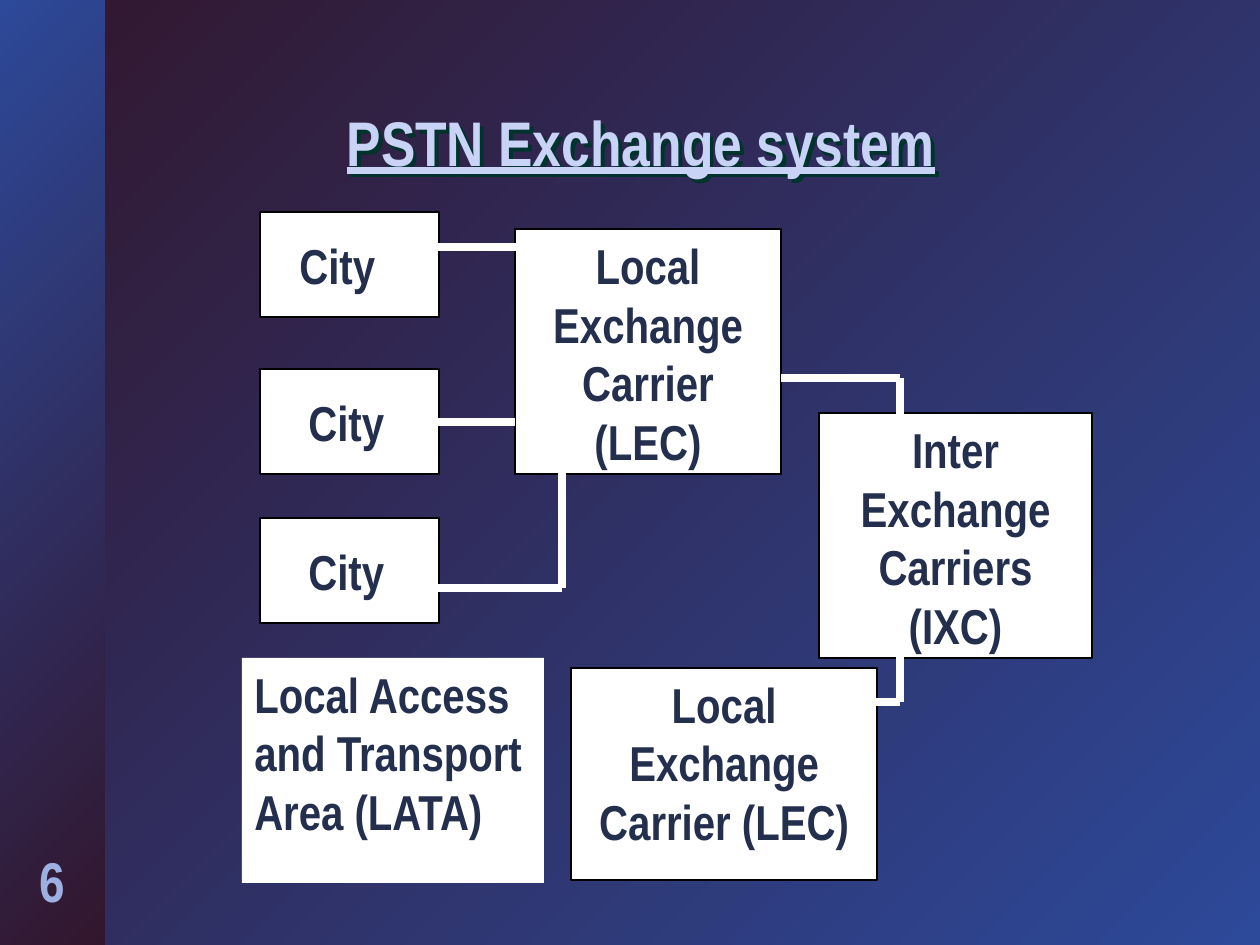
from itertools import pairwise

from lxml.etree import SubElement
from pptx import Presentation
from pptx.dml.color import RGBColor
from pptx.enum.shapes import MSO_CONNECTOR as Link, MSO_SHAPE as Kind
from pptx.enum.text import MSO_ANCHOR as Anchor, PP_ALIGN as Align
from pptx.oxml.ns import qn
from pptx.util import Pt

SCALE = 914400 / 126
FONT = "Arial Narrow"
PLUM = RGBColor(0x32, 0x16, 0x2D)
BLUE = RGBColor(0x2D, 0x49, 0x99)
WHITE = RGBColor(0xFF, 0xFF, 0xFF)
BLACK = RGBColor(0, 0, 0)
NAVY = RGBColor(0x24, 0x2F, 0x4E)
PALE = RGBColor(0xC8, 0xD3, 0xF6)
MIST = RGBColor(0x9E, 0xB0, 0xE2)
GREEN = RGBColor(0x00, 0x33, 0x2D)

CITY_X, CITY_W, CITY_H = 260, 179, 105
CITIES = [(212, 287, 123, 66), (369, 296, 110, 52), (518, 296, 110, 66)]
NODES = [
    ("Local Exchange Carrier (LEC)", (515, 229, 266, 245)),
    ("Local Exchange Carrier (LEC)", (571, 668, 306, 212)),
    ("Inter Exchange Carriers\n(IXC)", (819, 413, 273, 245)),
]
PATHS = [
    [(433, 247), (543, 247)],
    [(433, 422), (515, 422)],
    [(433, 588), (562, 588), (562, 457)],
    [(781, 378), (900, 378), (900, 422)],
    [(854, 702), (900, 702), (900, 640)],
]


def px(*vals):
    """Turn pixel lengths into EMU."""
    return [round(val * SCALE) for val in vals]


def blend(fill, first, last):
    """Set a diagonal gradient between two colours."""
    fill.gradient()
    fill.gradient_angle = 315
    for stop, pos, color in zip(fill.gradient_stops, (0, 1), (first, last)):
        stop.position = pos
        stop.color.rgb = color


def box(slide, area, line=None):
    """Add a white rectangle with an optional thin outline."""
    shape = slide.shapes.add_shape(Kind.RECTANGLE, *px(*area))
    shape.shadow.inherit = False
    shape.fill.solid()
    shape.fill.fore_color.rgb = WHITE
    if line is None:
        shape.line.fill.background()
    else:
        shape.line.color.rgb = line
        shape.line.width = Pt(0.75)
    return shape


def write(shape, text, size=28, color=NAVY, align=Align.LEFT,
          anchor=Anchor.TOP, under=None, space=None):
    """Put formatted text into a shape."""
    frame = shape.text_frame
    frame.word_wrap = True
    frame.vertical_anchor = anchor
    frame.text = text
    for para in frame.paragraphs:
        para.alignment = align
        para.line_spacing = space
        for run in para.runs:
            font = run.font
            font.name, font.size, font.bold = FONT, Pt(size), True
            font.underline = under
            font.color.rgb = color


def shade(shape, color, dist):
    """Cast a hard diagonal shadow from a text box."""
    effects = SubElement(shape.element.spPr, qn("a:effectLst"))
    shadow = SubElement(effects, qn("a:outerShdw"), dist=str(dist),
                        dir="2700000", algn="ctr", rotWithShape="0")
    SubElement(shadow, qn("a:srgbClr"), val=str(color))


def wire(slide, start, end):
    """Add one thick white line."""
    line = slide.shapes.add_connector(Link.STRAIGHT, *px(*start, *end))
    line.line.color.rgb = WHITE
    line.line.width = Pt(4.5)
    SubElement(line.element.spPr, qn("a:effectLst"))


def main():
    """Build the slide and save it."""
    deck = Presentation()
    deck.slide_width, deck.slide_height = px(1260, 945)
    slide = deck.slides.add_slide(deck.slide_layouts[6])
    blend(slide.background.fill, PLUM, BLUE)
    blend(box(slide, (0, 0, 105, 945)).fill, BLUE, PLUM)

    page = slide.shapes.add_textbox(*px(10, 840, 84, 79))
    write(page, "6", size=32, color=MIST, align=Align.CENTER)

    for top, *_ in CITIES:
        box(slide, (CITY_X, top, CITY_W, CITY_H), BLACK)
    for top, left, wide, high in CITIES:
        write(box(slide, (left, top + 17, wide, high)), "City")
    for text, area in NODES:
        write(box(slide, area, BLACK), text, align=Align.CENTER)
    write(box(slide, (242, 658, 302, 225)),
          "Local Access and Transport Area (LATA)")

    for path in PATHS:
        for start, end in pairwise(path):
            wire(slide, start, end)

    title = slide.shapes.add_textbox(*px(142, 105, 998, 83))
    write(title, "PSTN Exchange system", size=36, color=PALE,
          align=Align.CENTER, anchor=Anchor.MIDDLE, under=True, space=0.9)
    shade(title, GREEN, Pt(3))

    deck.save("out.pptx")


if __name__ == "__main__":
    main()
